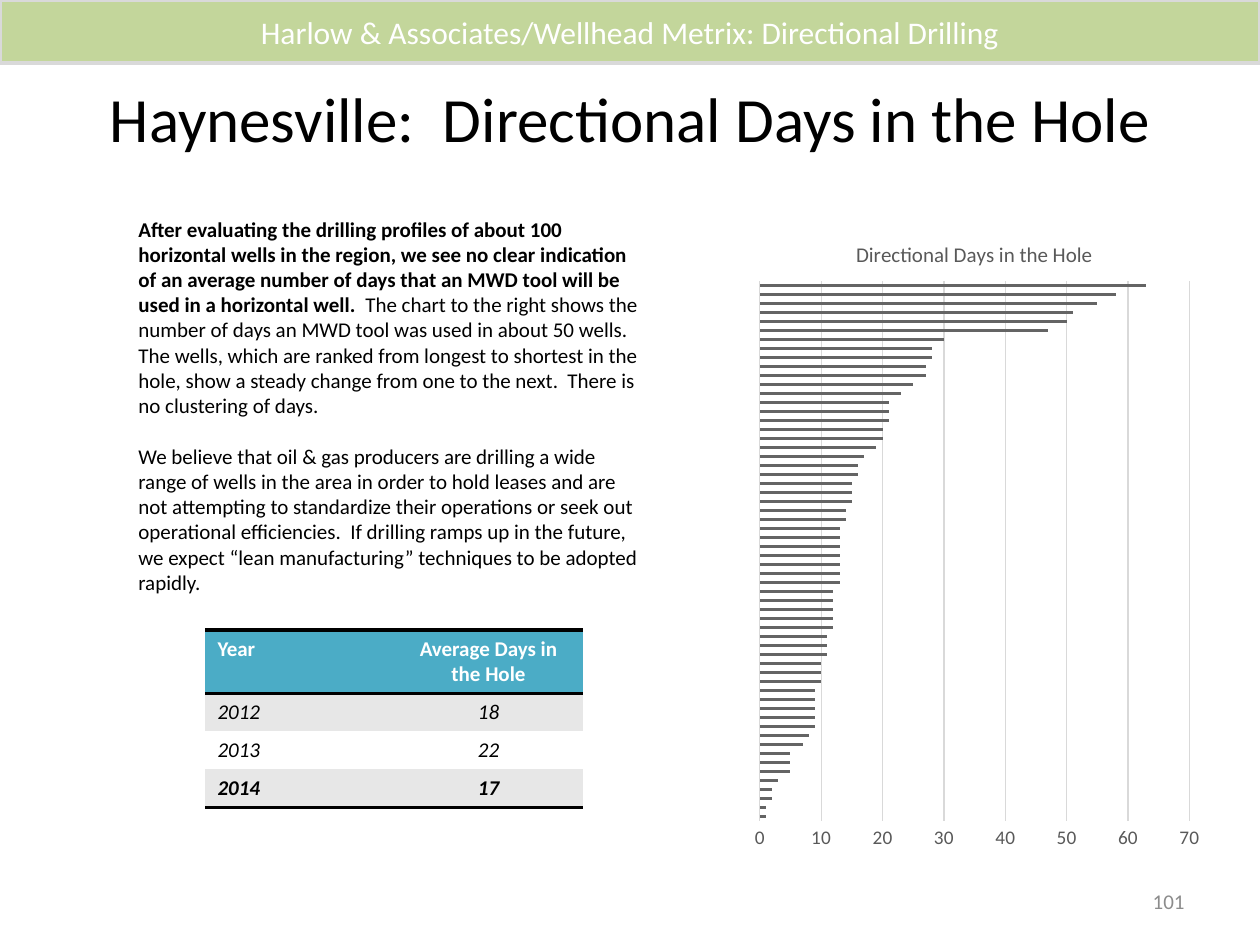
from lxml import etree
from pptx import Presentation
from pptx.chart.data import CategoryChartData
from pptx.dml.color import RGBColor
from pptx.enum.chart import XL_CHART_TYPE, XL_TICK_MARK
from pptx.enum.shapes import MSO_SHAPE
from pptx.enum.text import MSO_ANCHOR, PP_ALIGN
from pptx.oxml import parse_xml
from pptx.oxml.ns import nsdecls, qn
from pptx.util import Pt

LEFT, CENTER, RIGHT = PP_ALIGN.LEFT, PP_ALIGN.CENTER, PP_ALIGN.RIGHT
TOP, MIDDLE = MSO_ANCHOR.TOP, MSO_ANCHOR.MIDDLE
RECT = MSO_SHAPE.RECTANGLE
BAR = XL_CHART_TYPE.BAR_CLUSTERED
NO_TICK = XL_TICK_MARK.NONE

BLACK = RGBColor(0x00, 0x00, 0x00)
WHITE = RGBColor(0xFF, 0xFF, 0xFF)
GREEN = RGBColor(0xC3, 0xD6, 0x9B)
TEAL = RGBColor(0x4B, 0xAC, 0xC6)
BAND = RGBColor(0xE7, 0xE7, 0xE7)
RULE = RGBColor(0xD9, 0xD9, 0xD9)
BAR_GRAY = RGBColor(0x64, 0x64, 0x64)
LABEL_GRAY = RGBColor(0x59, 0x59, 0x59)
NUMBER_GRAY = RGBColor(0x8C, 0x8C, 0x8C)

FONT = "Calibri"
PX_PER_INCH = 126
NO_STYLE = "{2D5ABB26-0587-4C30-8999-92F81FD0307C}"

FINDING = ("After evaluating the drilling profiles of about 100 horizontal wells in the "
           "region, we see no clear indication of an average number of days that an MWD "
           "tool will be used in a horizontal well.  ")
DETAIL = ("The chart to the right shows the number of days an MWD tool was used in about "
          "50 wells.  The wells, which are ranked from longest to shortest in the hole, "
          "show a steady change from one to the next.  There is no clustering of days.")
OUTLOOK = ("We believe that oil & gas producers are drilling a wide range of wells in the "
           "area in order to hold leases and are not attempting to standardize their "
           "operations or seek out operational efficiencies.  If drilling ramps up in the "
           "future, we expect “lean manufacturing” techniques to be adopted rapidly.")

AVERAGES = [("Year", "Average Days in the Hole"),
            ("2012", "18"), ("2013", "22"), ("2014", "17")]
DAYS = [1, 1, 2, 2, 3, 5, 5, 5, 7, 8, 9, 9, 9, 9, 9, 10, 10, 10, 11, 11,
        11, 12, 12, 12, 12, 12, 13, 13, 13, 13, 13, 13, 13, 14, 14, 15, 15, 15, 16, 16,
        17, 19, 20, 20, 21, 21, 21, 23, 25, 27, 27, 28, 28, 30, 47, 50, 51, 55, 58, 63]


def px(n):
    return round(n * 914400 / PX_PER_INCH)


def box(*lengths):
    return [px(n) for n in lengths]


def set_font(font, size, color=BLACK, bold=False, italic=False):
    font.name, font.size = FONT, Pt(size)
    font.bold, font.italic = bold, italic
    font.color.rgb = color


def write(tf, text, size=12, align=LEFT, anchor=TOP, **style):
    """Fill a text frame; text is a string or a list of paragraphs of (text, bold) runs."""
    tf.word_wrap = True
    tf.vertical_anchor = anchor
    paragraphs = [[(text, style.pop("bold", False))]] if isinstance(text, str) else text
    for i, runs in enumerate(paragraphs):
        p = tf.add_paragraph() if i else tf.paragraphs[0]
        p.alignment = align
        if i:
            p.space_before = Pt(14.6)
        for part, bold in runs:
            r = p.add_run()
            r.text = part
            set_font(r.font, size, bold=bold, **style)


def add_text(slide, at, text, **style):
    write(slide.shapes.add_textbox(*box(*at)).text_frame, text, **style)


def add_title(slide, at, text):
    sp = slide.shapes.title
    sp.left, sp.top, sp.width, sp.height = box(*at)
    write(sp.text_frame, text, size=36, align=CENTER, anchor=MIDDLE)


def add_banner(slide, at, text):
    sp = slide.shapes.add_shape(RECT, *box(*at))
    sp.shadow.inherit = False
    sp.fill.solid()
    sp.fill.fore_color.rgb = GREEN
    sp.line.color.rgb = RULE
    sp.line.width = Pt(2)
    write(sp.text_frame, text, size=18, align=CENTER, anchor=MIDDLE, color=WHITE)


def set_border(cell, *sides):
    tc_pr = cell._tc.get_or_add_tcPr()
    for i, side in enumerate(sides):
        tc_pr.insert(i, parse_xml(
            f'<a:{side} {nsdecls("a")} w="{Pt(2)}"><a:solidFill>'
            f'<a:srgbClr val="{BLACK}"/></a:solidFill></a:{side}>'))


def add_table(slide, at, rows, heights):
    table = slide.shapes.add_table(len(rows), len(rows[0]), *box(*at)).table
    table._tbl.tblPr.find(qn("a:tableStyleId")).text = NO_STYLE
    last = len(rows) - 1
    for i, (values, height) in enumerate(zip(rows, heights)):
        table.rows[i].height = px(height)
        for j, value in enumerate(values):
            cell = table.cell(i, j)
            cell.fill.solid()
            cell.fill.fore_color.rgb = TEAL if i == 0 else BAND if i % 2 else WHITE
            write(cell.text_frame, value, align=CENTER if j else LEFT,
                  color=BLACK if i else WHITE, bold=i in (0, last), italic=i > 0)
            if i == 0:
                set_border(cell, "lnT", "lnB")
            elif i == last:
                set_border(cell, "lnB")


def set_layout(parent, index, inner=False, **fractions):
    """Place a chart part by fractions of the chart's size."""
    for old in parent.findall(qn("c:layout")):
        parent.remove(old)
    layout = etree.Element(qn("c:layout"))
    manual = etree.SubElement(layout, qn("c:manualLayout"))
    values = {"layoutTarget": "inner"} if inner else {}
    values.update(xMode="edge", yMode="edge", **fractions)
    for name, value in values.items():
        etree.SubElement(manual, qn("c:" + name)).set("val", str(value))
    parent.insert(index, layout)


def add_days_chart(slide, at, title, days):
    data = CategoryChartData()
    data.categories = [str(n + 1) for n in range(len(days))]
    data.add_series("Series 1", days)
    chart = slide.shapes.add_chart(BAR, *box(*at), data).chart
    set_font(chart.font, 10)
    chart.has_legend = False

    # Title and plot area
    chart.has_title = True
    write(chart.chart_title.text_frame, title, align=CENTER, color=LABEL_GRAY)
    set_layout(chart.chart_title._element, 1, x=0.23, y=0.04)
    set_layout(chart._chartSpace.chart.plotArea, 0, inner=True,
               x=0.03, y=0.11, w=0.93, h=0.83)

    # Axes
    chart.category_axis.visible = False
    axis = chart.value_axis
    axis.minimum_scale, axis.maximum_scale, axis.major_unit = 0, 70, 10
    axis.major_tick_mark = axis.minor_tick_mark = NO_TICK
    axis.format.line.fill.background()
    set_font(axis.tick_labels.font, 11, LABEL_GRAY)
    grid = axis.major_gridlines.format.line
    grid.color.rgb, grid.width = RULE, Pt(0.75)

    # Bars
    plot = chart.plots[0]
    plot.gap_width = 182
    plot.vary_by_categories = False
    fill = plot.series[0].format.fill
    fill.solid()
    fill.fore_color.rgb = BAR_GRAY


def main():
    prs = Presentation()
    prs.slide_width, prs.slide_height = box(1260, 945)
    slide = prs.slides.add_slide(prs.slide_layouts[5])

    # Heading
    add_banner(slide, (0, 0, 1260, 63), "Harlow & Associates/Wellhead Metrix: Directional Drilling")
    add_title(slide, (42, 38, 1176, 158), "Haynesville:  Directional Days in the Hole")

    # Commentary and yearly averages
    add_text(slide, (126, 210, 525, 394),
             [[(FINDING, True), (DETAIL, False)], [(OUTLOOK, False)]])
    add_table(slide, (205, 630, 378, 177), AVERAGES, (63, 38, 38, 38))

    # Days per well and page number
    add_days_chart(slide, (746, 210, 462, 650), "Directional Days in the Hole", DAYS)
    add_text(slide, (903, 876, 294, 50), "101", align=RIGHT, anchor=MIDDLE, color=NUMBER_GRAY)

    prs.save("out.pptx")


if __name__ == "__main__":
    main()
